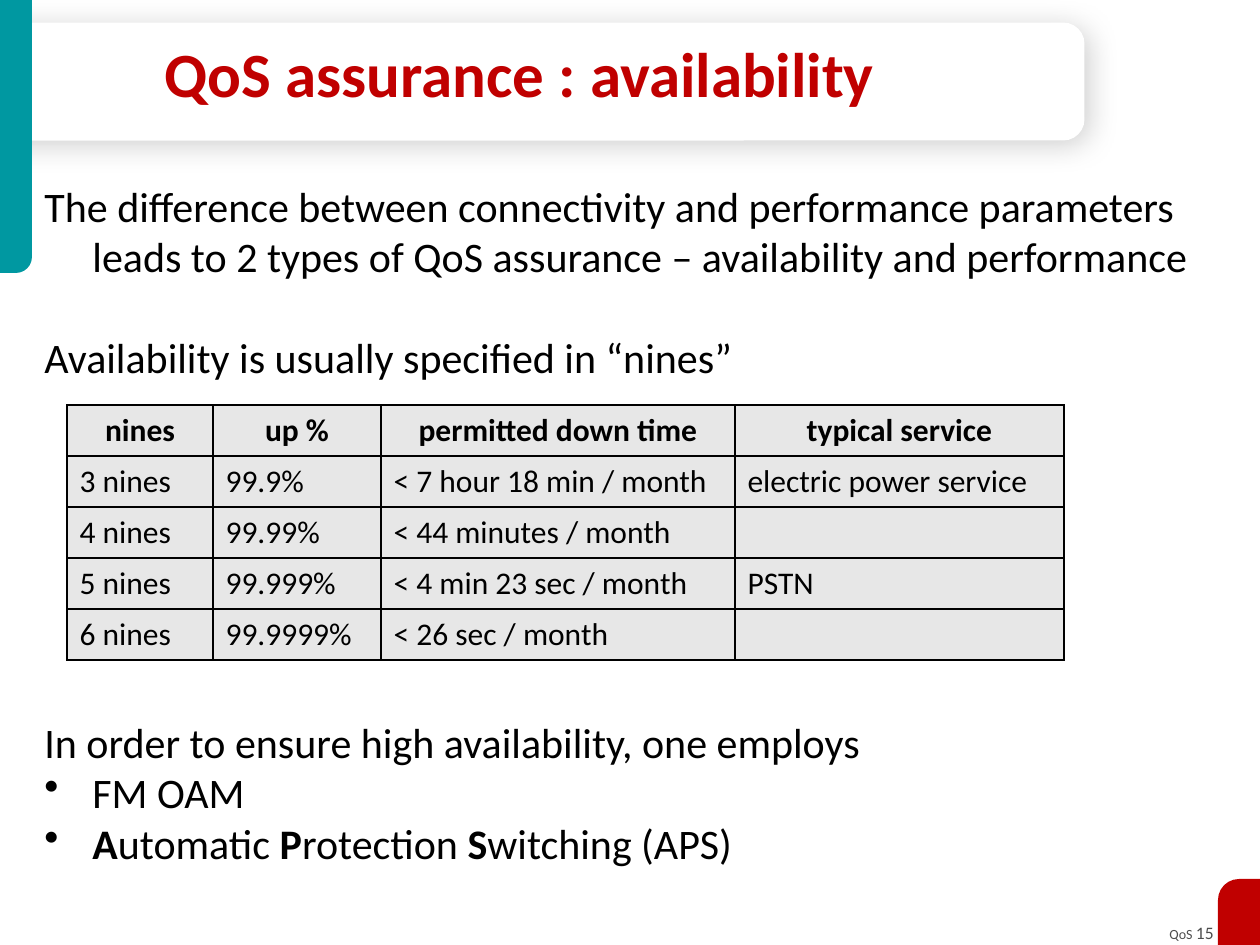
from dataclasses import dataclass
from typing import Any

from lxml.etree import SubElement
from pptx import Presentation
from pptx.dml.color import RGBColor
from pptx.enum.shapes import MSO_SHAPE
from pptx.enum.text import MSO_ANCHOR, PP_ALIGN
from pptx.oxml import parse_xml
from pptx.oxml.ns import nsdecls, qn
from pptx.util import Emu, Pt

SCALE = 914400 / 126
FONT = "Calibri"
HEX = {"white": "FFFFFF", "black": "000000", "teal": "0098A1",
       "red": "C00000", "gray": "4D4D4D", "cell": "E7E7E7"}


@dataclass
class Box:
    left: int
    top: int
    width: int
    height: int


@dataclass
class Panel:
    kind: MSO_SHAPE
    box: Box
    color: str
    bends: tuple[float, ...]
    turn: int = 0
    flip: str = ""
    shade: bool = False


@dataclass
class Line:
    runs: list[tuple[str, bool]]
    hang: bool = True
    bullet: bool = False
    before: int = 0


PANELS = [
    Panel(MSO_SHAPE.ROUND_2_SAME_RECTANGLE, Box(483, -461, 118, 1085), "white",
          (0.18, 0), turn=90, shade=True),
    Panel(MSO_SHAPE.ROUND_1_RECTANGLE, Box(0, 0, 32, 273), "teal", (0.5,), flip="flipV"),
    Panel(MSO_SHAPE.ROUND_1_RECTANGLE, Box(1218, 879, 42, 66), "red", (0.5,), flip="flipH"),
]
LINES = [
    Line([("The difference between connectivity and performance parameters", False)]),
    Line([("leads to 2 types of QoS assurance – availability and performance", False)],
         hang=False),
    Line([("Availability is usually specified in “nines”", False)], before=29),
    Line([("In order to ensure high availability, one employs", False)], before=191),
    Line([("FM OAM", False)], bullet=True),
    Line([("A", True), ("utomatic ", False), ("P", True), ("rotection ", False),
          ("S", True), ("witching (APS)", False)], bullet=True),
]
COLS = [146, 168, 354, 329]
ROWS = [
    ["nines", "up %", "permitted down time", "typical service"],
    ["3 nines", "99.9%", "< 7 hour 18 min / month", "electric power service"],
    ["4 nines", "99.99%", "< 44 minutes / month", ""],
    ["5 nines", "99.999%", "< 4 min 23 sec / month", "PSTN"],
    ["6 nines", "99.9999%", "< 26 sec / month", ""],
]


def px(count: int) -> Emu:
    return Emu(round(count * SCALE))


def place(box: Box) -> tuple[Emu, Emu, Emu, Emu]:
    return px(box.left), px(box.top), px(box.width), px(box.height)


def rgb(name: str) -> RGBColor:
    return RGBColor.from_string(HEX[name])


def style(font: Any, size: int, color: str) -> None:
    font.name = FONT
    font.size = Pt(size)
    font.color.rgb = rgb(color)


def add_panel(slide: Any, panel: Panel) -> None:
    shape = slide.shapes.add_shape(panel.kind, *place(panel.box))
    shape.fill.solid()
    shape.fill.fore_color.rgb = rgb(panel.color)
    shape.line.fill.background()
    shape.shadow.inherit = False
    shape.rotation = panel.turn
    for spot, bend in enumerate(panel.bends):
        shape.adjustments[spot] = bend
    props = shape._element.spPr
    if panel.flip:
        props.find(qn("a:xfrm")).set(panel.flip, "1")
    if panel.shade:
        props.find(qn("a:effectLst")).append(parse_xml(
            f'<a:outerShdw {nsdecls("a")} blurRad="{Pt(17)}" dist="{Pt(3)}" '
            f'dir="2700000" algn="tl" rotWithShape="0"><a:srgbClr val="{HEX["black"]}">'
            '<a:alpha val="19000"/></a:srgbClr></a:outerShdw>'))


def add_frame(slide: Any, box: Box, wrap: bool = True) -> Any:
    frame = slide.shapes.add_textbox(*place(box)).text_frame
    frame.word_wrap = wrap
    return frame


def add_title(slide: Any) -> None:
    frame = add_frame(slide, Box(152, 37, 915, 83))
    frame.vertical_anchor = MSO_ANCHOR.MIDDLE
    para = frame.paragraphs[0]
    para.text = "QoS assurance : availability"
    para.line_spacing = 0.85
    style(para.font, 36, "red")
    para.font.bold = True


def add_footer(slide: Any) -> None:
    para = add_frame(slide, Box(1153, 916, 73, 34), wrap=False).paragraphs[0]
    para.alignment = PP_ALIGN.RIGHT
    for text, size in (("QoS ", 8), ("15", 10)):
        run = para.add_run()
        run.text = text
        style(run.font, size, "gray")


def add_body(slide: Any) -> None:
    frame = add_frame(slide, Box(32, 174, 1206, 716))
    for spot, line in enumerate(LINES):
        para = frame.add_paragraph() if spot else frame.paragraphs[0]
        for text, bold in line.runs:
            run = para.add_run()
            run.text = text
            run.font.bold = bold
        para.space_before = Pt(line.before)
        style(para.font, 24, "black")
        props = para._p.get_or_add_pPr()
        props.set("marL", str(px(48)))
        props.set("indent", str(-px(48) if line.hang else 0))
        if line.bullet:
            mark = parse_xml(f'<a:buChar {nsdecls("a")} char="•"/>')
            props.find(qn("a:defRPr")).addprevious(mark)


def edge_cell(cell: Any) -> None:
    props = cell._tc.get_or_add_tcPr()
    for spot, side in enumerate("LRTB"):
        edge = parse_xml(f'<a:ln{side} {nsdecls("a")} w="{Pt(1)}"/>')
        fill = SubElement(edge, qn("a:solidFill"))
        SubElement(fill, qn("a:srgbClr")).set("val", HEX["black"])
        props.insert(spot, edge)


def add_grid(slide: Any) -> None:
    high = 51
    box = Box(67, 405, sum(COLS), high * len(ROWS))
    table = slide.shapes.add_table(len(ROWS), len(COLS), *place(box)).table
    table.horz_banding = False
    table.first_row = False
    for col, width in zip(table.columns, COLS):
        col.width = px(width)
    for spot, (row, texts) in enumerate(zip(table.rows, ROWS)):
        row.height = px(high)
        head = spot == 0
        for cell, text in zip(row.cells, texts):
            cell.fill.solid()
            cell.fill.fore_color.rgb = rgb("cell")
            edge_cell(cell)
            para = cell.text_frame.paragraphs[0]
            para.text = text
            para.alignment = PP_ALIGN.CENTER if head else PP_ALIGN.LEFT
            style(para.font, 18, "black")
            para.font.bold = head


def main() -> None:
    deck = Presentation()
    deck.slide_width, deck.slide_height = px(1260), px(945)
    slide = deck.slides.add_slide(deck.slide_layouts[6])
    add_footer(slide)
    for panel in PANELS:
        add_panel(slide, panel)
    add_title(slide)
    add_body(slide)
    add_grid(slide)
    deck.save("out.pptx")


if __name__ == "__main__":
    main()
